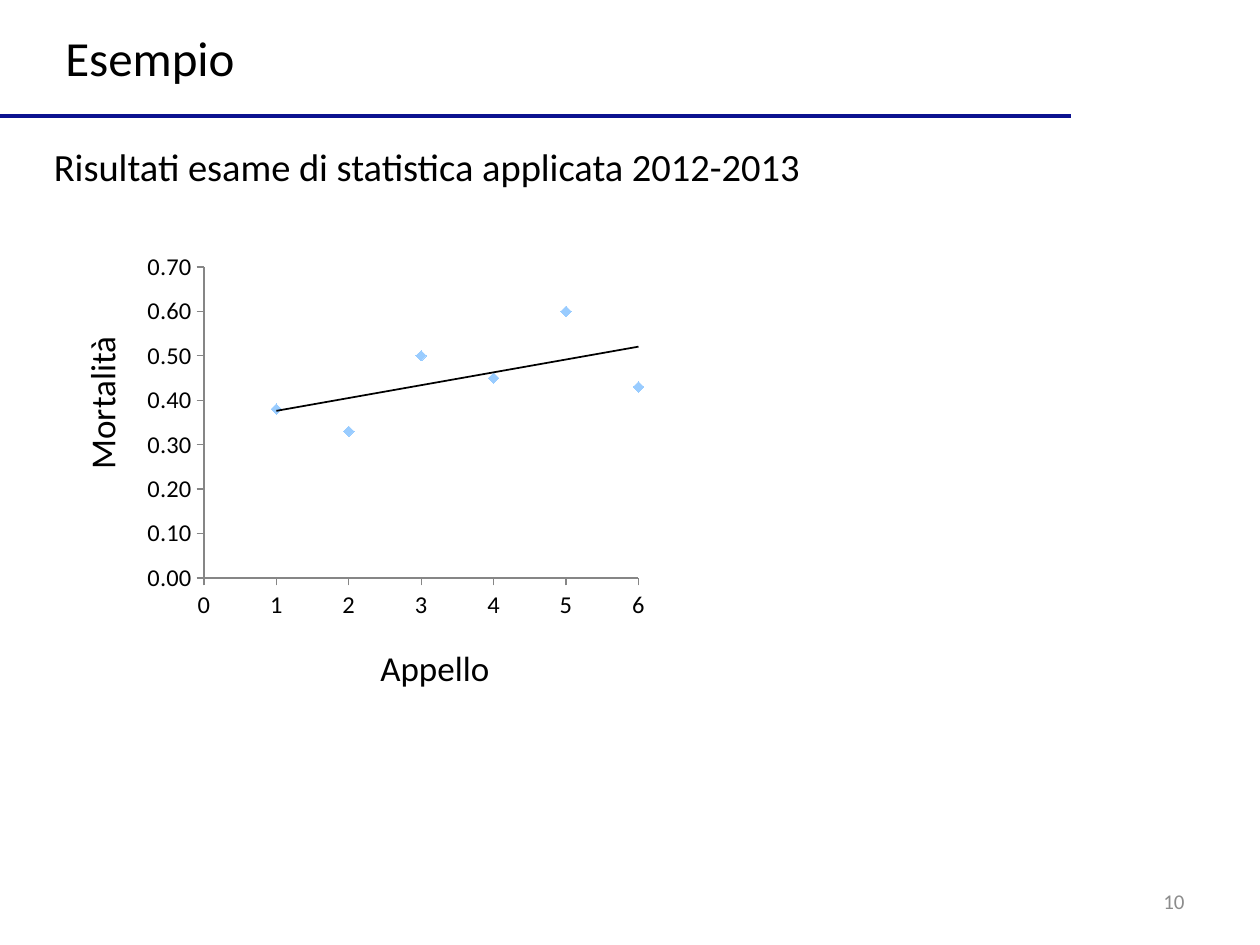
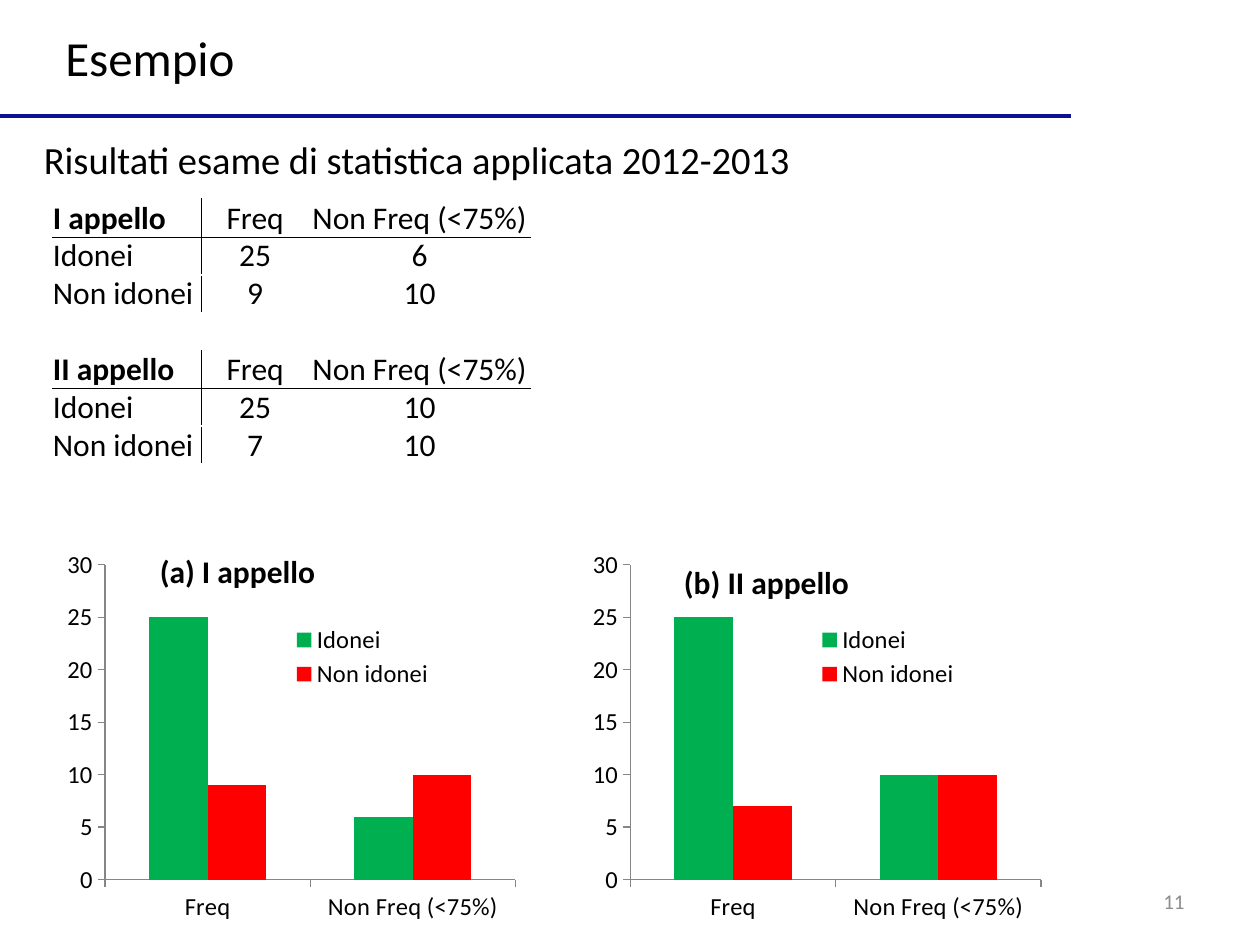
import pptx
import pptx.chart.data
import pptx.dml.color
import pptx.enum.chart
import pptx.enum.shapes
import pptx.enum.text
import pptx.oxml
import pptx.oxml.ns
import pptx.util
from pptx.util import Inches

COLOURS = {
    "text": "000000",
    "number": "8C8C8C",
    "rule": "0C1290",
    "axis": "868686",
    "marker": "99CCFF",
    "Idonei": "00B050",
    "Non idonei": "FF0000",
}
FONT = "Calibri"
GROUPS = ["Freq", "Non Freq (<75%)"]
EXAMS = {
    "I appello": {"Idonei": [25, 6], "Non idonei": [9, 10]},
    "II appello": {"Idonei": [25, 10], "Non idonei": [7, 10]},
}
FAILURE_RATES = [0.38, 0.33, 0.5, 0.45, 0.6, 0.43]
ALIGN = pptx.enum.text.PP_ALIGN
ANCHOR = pptx.enum.text.MSO_ANCHOR
CHART_TYPE = pptx.enum.chart.XL_CHART_TYPE
qn = pptx.oxml.ns.qn


def colour(name):
    return pptx.dml.color.RGBColor.from_string(COLOURS[name])


def parse_xml(prefix, body):
    """Build an element from a body whose root has a place for namespaces."""
    return pptx.oxml.parse_xml(body.replace("NS", pptx.oxml.ns.nsdecls(*prefix)))


def style_font(font, size, name="text", bold=False):
    font.name = FONT
    font.size = pptx.util.Pt(size)
    font.bold = bold
    font.color.rgb = colour(name)


def write(frame, text, size=18, name="text", bold=False, align=ALIGN.LEFT):
    paragraph = frame.paragraphs[0]
    paragraph.alignment = align
    run = paragraph.add_run()
    run.text = text
    style_font(run.font, size, name, bold)


def set_layout(parent, position, box, inner=False):
    """Place a plot area or legend by fractions of the chart."""
    for old in parent.findall(qn("c:layout")):
        parent.remove(old)
    target = '<c:layoutTarget val="inner"/>' if inner else ""
    modes = "".join(f'<c:{axis}Mode val="edge"/>' for axis in "xy")
    values = "".join(f'<c:{key} val="{value}"/>' for key, value in zip("xywh", box))
    parent.insert(position, parse_xml(
        ["c"], f"<c:layout NS><c:manualLayout>{target}{modes}{values}"
               "</c:manualLayout></c:layout>"))


def draw_borders(cell, sides):
    properties = cell._tc.get_or_add_tcPr()
    for position, side in enumerate(side for side in "LRTB" if side in sides):
        properties.insert(position, parse_xml(
            ["a"], f'<a:ln{side} NS w="6350"><a:solidFill>'
                   f'<a:srgbClr val="{COLOURS["text"]}"/></a:solidFill></a:ln{side}>'))


class Deck:
    def __init__(self):
        self.presentation = pptx.Presentation()
        self.presentation.slide_width = Inches(10)
        self.presentation.slide_height = Inches(7.5)
        self.slide = None

    def start_slide(self, title, number):
        self.slide = self.presentation.slides.add_slide(self.presentation.slide_layouts[6])
        self.text(str(number), 7.17, 6.95, 2.33, 0.4, size=12, name="number",
                  align=ALIGN.RIGHT)
        self.text(title, 0.42, 0.17, 1.56, 0.57, wrap=False, size=28)
        self.line(0, 0.92, 8.5, 0.92)

    def text(self, text, left, top, width, height, wrap=True, anchor=ANCHOR.MIDDLE,
             rotation=0, **style):
        box = self.slide.shapes.add_textbox(
            Inches(left), Inches(top), Inches(width), Inches(height))
        box.rotation = rotation
        box.text_frame.word_wrap = wrap
        box.text_frame.vertical_anchor = anchor
        write(box.text_frame, text, **style)

    def line(self, x1, y1, x2, y2):
        connector = self.slide.shapes.add_connector(
            pptx.enum.shapes.MSO_CONNECTOR.STRAIGHT,
            Inches(x1), Inches(y1), Inches(x2), Inches(y2))
        connector.line.color.rgb = colour("rule")
        connector.line.width = pptx.util.Pt(2)
        connector._element.spPr.append(parse_xml(["a"], "<a:effectLst NS/>"))

    def exam_table(self, left, top, widths, row_height):
        """Stack one frequency table per exam, with an empty row between them."""
        rows = []
        for exam, results in EXAMS.items():
            if rows:
                rows.append(None)
            rows.append([exam, *GROUPS])
            rows += [[result, *counts] for result, counts in results.items()]
        table = self.slide.shapes.add_table(
            len(rows), len(widths), Inches(left), Inches(top),
            Inches(sum(widths)), Inches(row_height * len(rows))).table
        table.first_row = table.horz_banding = False
        for column, width in zip(table.columns, widths):
            column.width = Inches(width)
        for row_index, row in enumerate(rows):
            table.rows[row_index].height = Inches(row_height)
            for column_index in range(len(widths)):
                cell = table.cell(row_index, column_index)
                cell.fill.background()
                cell.margin_left = cell.margin_right = 0
                cell.margin_top = cell.margin_bottom = 0
                cell.vertical_anchor = ANCHOR.BOTTOM
                if row is None:
                    continue
                text = str(row[column_index])
                write(cell.text_frame, text, bold=text in EXAMS,
                      align=ALIGN.CENTER if column_index else ALIGN.LEFT)
                sides = {0: "R", 1: "L"}.get(column_index, "")
                sides += "B" if row[0] in EXAMS else "T" if row[0] == "Idonei" else ""
                draw_borders(cell, sides)

    def chart(self, kind, data, left, top, width, height, plot, maximum, step):
        chart = self.slide.shapes.add_chart(
            kind, Inches(left), Inches(top), Inches(width), Inches(height), data).chart
        chart.has_title = chart.has_legend = False
        style_font(chart.font, 14)
        for axis in (chart.category_axis, chart.value_axis):
            axis.has_major_gridlines = False
            axis.has_title = False
            axis.major_tick_mark = pptx.enum.chart.XL_TICK_MARK.OUTSIDE
            axis.minor_tick_mark = pptx.enum.chart.XL_TICK_MARK.NONE
            axis.format.line.color.rgb = colour("axis")
        chart.value_axis.minimum_scale = 0
        chart.value_axis.maximum_scale = maximum
        chart.value_axis.major_unit = step
        set_layout(chart._chartSpace.chart.plotArea, 0, plot, inner=True)
        return chart

    def trend_chart(self, *place):
        data = pptx.chart.data.XyChartData()
        points = data.add_series("Mortalità")
        for exam, rate in enumerate(FAILURE_RATES, start=1):
            points.add_data_point(exam, rate)
        chart = self.chart(CHART_TYPE.XY_SCATTER, data, *place,
                           plot=(0.11, 0.028, 0.862, 0.833), maximum=0.7, step=0.1)
        chart.category_axis.minimum_scale = 0
        chart.category_axis.maximum_scale = len(FAILURE_RATES)
        chart.category_axis.major_unit = 1
        for axis, pattern in ((chart.category_axis, "0"), (chart.value_axis, "0.00")):
            axis.tick_labels.number_format = pattern
            axis.tick_labels.number_format_is_linked = False
        chart.plots[0].vary_by_categories = False
        series = chart.plots[0].series[0]
        series.format.line.fill.background()
        series.marker.style = pptx.enum.chart.XL_MARKER_STYLE.DIAMOND
        series.marker.size = 6
        series.marker.format.fill.solid()
        series.marker.format.fill.fore_color.rgb = colour("marker")
        series.marker.format.line.fill.background()
        series._element.find(qn("c:xVal")).addprevious(parse_xml(
            ["c", "a"],
            '<c:trendline NS><c:spPr><a:ln w="12700"><a:solidFill>'
            f'<a:srgbClr val="{COLOURS["text"]}"/></a:solidFill></a:ln></c:spPr>'
            '<c:trendlineType val="linear"/><c:dispRSqr val="0"/>'
            '<c:dispEq val="0"/></c:trendline>'))

    def exam_chart(self, results, *place):
        data = pptx.chart.data.CategoryChartData()
        data.categories = GROUPS
        for result, counts in results.items():
            data.add_series(result, counts)
        chart = self.chart(CHART_TYPE.COLUMN_CLUSTERED, data, *place,
                           plot=(0.085, 0.051, 0.829, 0.833), maximum=30, step=5)
        plot = chart.plots[0]
        plot.vary_by_categories = False
        plot.gap_width = 150
        plot.overlap = 0
        for series in plot.series:
            series.format.fill.solid()
            series.format.fill.fore_color.rgb = colour(series.name)
        chart.has_legend = True
        chart.legend.position = pptx.enum.chart.XL_LEGEND_POSITION.RIGHT
        chart.legend.include_in_layout = False
        style_font(chart.legend.font, 14)
        set_layout(chart.legend._element, 1, (0.45, 0.2, 0.31, 0.19))


def main():
    deck = Deck()
    heading = "Risultati esame di statistica applicata 2012-2013"

    deck.start_slide("Esempio", 10)
    deck.text(heading, 0.33, 1.08, 9.43, 0.47, size=22)
    deck.text("Appello", 2.92, 5.08, 1.08, 0.44, wrap=False, size=20)
    deck.text("Mortalità", 0.17, 2.97, 1.27, 0.44, wrap=False, rotation=270, size=20)
    deck.trend_chart(1.17, 2, 4.01, 3)

    deck.start_slide("Esempio", 11)
    deck.text(heading, 0.25, 1.03, 9.43, 0.47, size=22)
    deck.exam_table(0.42, 1.58, [1.18, 0.85, 1.76], 0.3)
    chart_lefts = [0.5, 4.67]
    for left, results in zip(chart_lefts, EXAMS.values()):
        deck.exam_chart(results, left, 4.33, 3.93, 3)
    captions = [("a", 1.17, 4.33, 1.44), ("b", 5.33, 4.42, 1.52)]
    for exam, (letter, left, top, width) in zip(EXAMS, captions):
        deck.text(f"({letter}) {exam}", left, top, width, 0.4, wrap=False,
                  anchor=ANCHOR.TOP, bold=True)

    deck.presentation.save("out.pptx")


if __name__ == "__main__":
    main()
